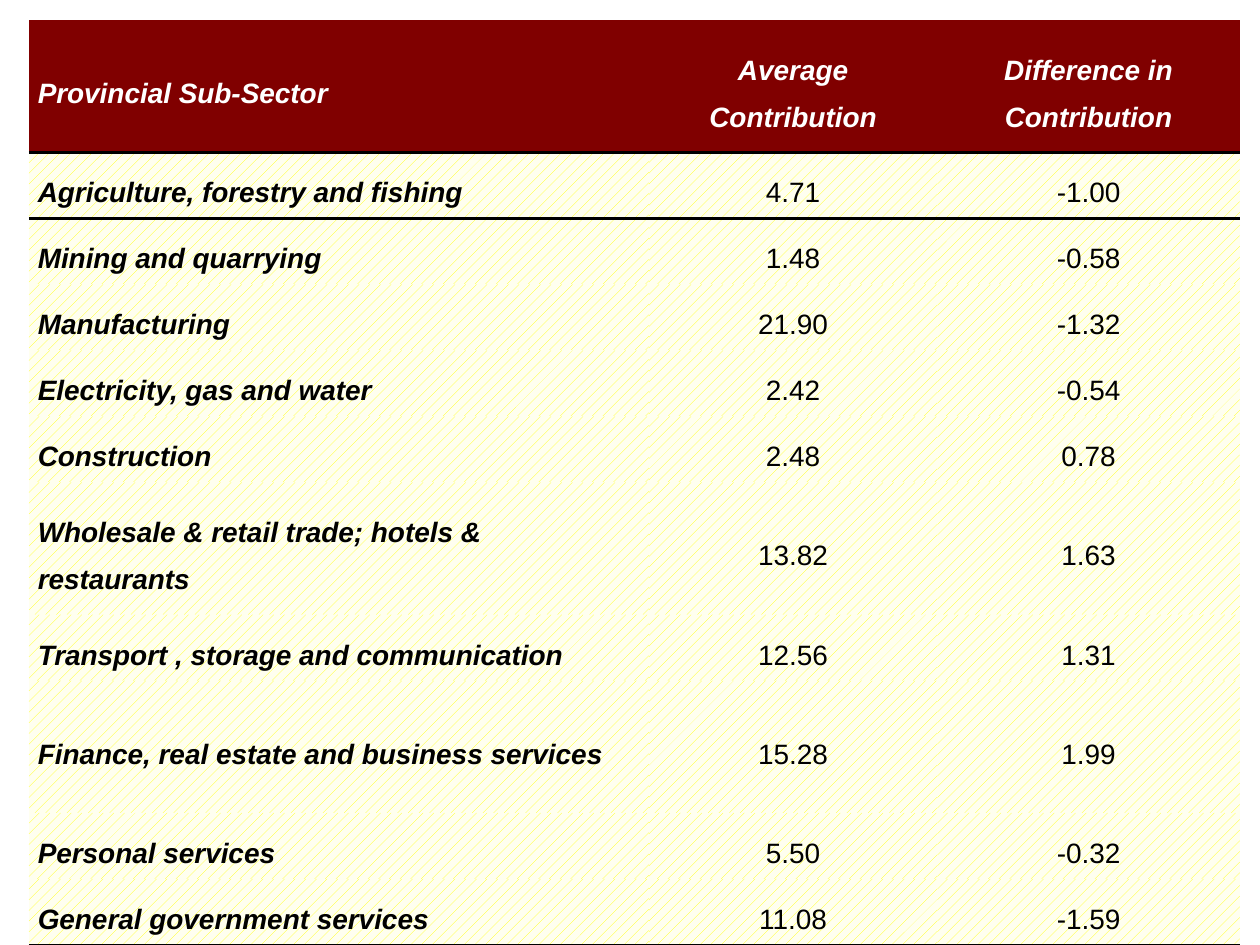
from pptx import Presentation
from pptx.dml.color import RGBColor
from pptx.enum.dml import MSO_PATTERN
from pptx.enum.text import MSO_ANCHOR, PP_ALIGN
from pptx.oxml import parse_xml
from pptx.oxml.ns import nsdecls, qn
from pptx.util import Inches, Pt

MAROON = RGBColor(0x80, 0x00, 0x00)
YELLOW = RGBColor(0xFF, 0xFF, 0x00)
CREAM = RGBColor(0xFF, 0xFF, 0xEF)
WHITE = RGBColor(0xFF, 0xFF, 0xFF)
BLACK = RGBColor(0x00, 0x00, 0x00)
PLAIN_STYLE = "{2D5ABB26-0587-4C30-8999-92F81FD0307C}"  # no style, no grid

HEADINGS = ("Provincial Sub-Sector", "Average Contribution", "Difference in Contribution")
SECTORS = [
    ("Agriculture, forestry and fishing", "4.71", "-1.00"),
    ("Mining and quarrying", "1.48", "-0.58"),
    ("Manufacturing", "21.90", "-1.32"),
    ("Electricity, gas and water", "2.42", "-0.54"),
    ("Construction", "2.48", "0.78"),
    ("Wholesale & retail trade; hotels & restaurants", "13.82", "1.63"),
    ("Transport , storage and communication", "12.56", "1.31"),
    ("Finance, real estate and business services", "15.28", "1.99"),
    ("Personal services", "5.50", "-0.32"),
    ("General government services", "11.08", "-1.59"),
]
COLUMN_WIDTHS = (4.92, 2.29, 2.4)
TABLE_HEIGHT = 7.34
DOUBLE_ROW = 1.05
DOUBLE_ROWS = {0, 6, 8}


class TablePage:
    """Holds the text style and the slide being filled."""

    font_name = "Arial"
    font_size = Pt(16)
    line_spacing = 1.5
    side_margin = Inches(0.07)
    rule_width = Pt(1.5)

    def __init__(self, page):
        self.page = page

    def add_table(self, left, top, rows, widths, heights):
        frame = self.page.shapes.add_table(
            len(rows), len(widths), Inches(left), Inches(top),
            Inches(sum(widths)), Inches(sum(heights)))
        table = frame.table
        table.horz_banding = False
        table._tbl.tblPr.find(qn("a:tableStyleId")).text = PLAIN_STYLE
        for column, width in zip(table.columns, widths):
            column.width = Inches(width)
        for row, height in zip(table.rows, heights):
            row.height = Inches(height)

        last = len(rows) - 1
        for r, texts in enumerate(rows):
            for c, text in enumerate(texts):
                cell = table.cell(r, c)
                self.set_text(cell, text, header=r == 0, label=c == 0)
                self.set_fill(cell, header=r == 0)
                if r in (0, last):
                    self.add_rule(cell, "lnB")
                elif r == 1:
                    self.add_rule(cell, "lnT")

    def set_text(self, cell, text, header, label):
        cell.vertical_anchor = MSO_ANCHOR.MIDDLE
        cell.margin_left = cell.margin_right = self.side_margin
        cell.margin_top = cell.margin_bottom = 0
        cell.text_frame.text = text
        para = cell.text_frame.paragraphs[0]
        para.alignment = PP_ALIGN.LEFT if label else PP_ALIGN.CENTER
        para.line_spacing = self.line_spacing
        font = para.runs[0].font
        font.name, font.size = self.font_name, self.font_size
        font.bold = font.italic = header or label
        font.color.rgb = WHITE if header else BLACK

    def set_fill(self, cell, header):
        if header:
            cell.fill.solid()
            cell.fill.fore_color.rgb = MAROON
        else:
            cell.fill.patterned()
            cell.fill.pattern = MSO_PATTERN.PERCENT_20
            cell.fill.fore_color.rgb = YELLOW
            cell.fill.back_color.rgb = CREAM

    def add_rule(self, cell, side):
        # Border lines come before the fill in the cell properties
        line = parse_xml(
            f'<a:{side} {nsdecls("a")} w="{self.rule_width}"><a:solidFill>'
            f'<a:srgbClr val="{BLACK}"/></a:solidFill></a:{side}>')
        cell._tc.get_or_add_tcPr().insert(0, line)


def main():
    deck = Presentation()
    deck.slide_width, deck.slide_height = Inches(10), Inches(7.5)
    page = deck.slides.add_slide(deck.slide_layouts[6])

    # Sector contribution table: single rows share what the double rows leave
    rows = [HEADINGS, *SECTORS]
    single_row = (TABLE_HEIGHT - DOUBLE_ROW * len(DOUBLE_ROWS)) / (len(rows) - len(DOUBLE_ROWS))
    heights = [DOUBLE_ROW if r in DOUBLE_ROWS else single_row for r in range(len(rows))]
    TablePage(page).add_table(0.23, 0.16, rows, COLUMN_WIDTHS, heights)

    deck.save("out.pptx")


if __name__ == "__main__":
    main()
